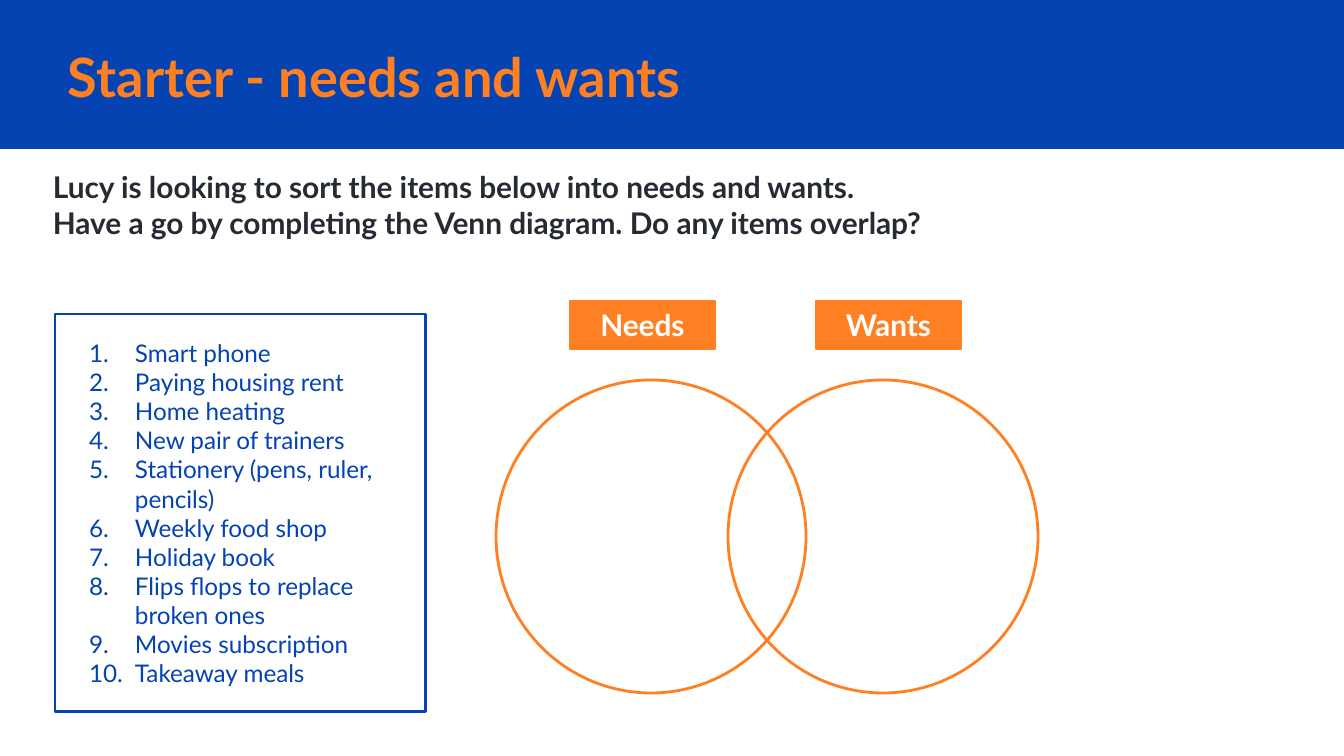
from lxml.etree import SubElement
from pptx import Presentation
from pptx.dml.color import RGBColor
from pptx.enum.shapes import MSO_SHAPE
from pptx.enum.text import MSO_ANCHOR, PP_ALIGN
from pptx.oxml.ns import qn
from pptx.util import Emu, Pt

FONT = "Lato"
BLUE, ORANGE, WHITE, DARK = "0543B3", "FF8022", "FFFFFF", "262A33"
PAD = 13


def px(n):
    return Emu(round(n * 914400 / 134.4))


def tint(color, code):
    color.rgb = RGBColor.from_string(code)


def shape(slide, kind, box, fill=None, line=None, width=1.5):
    item = slide.shapes.add_shape(kind, *map(px, box))
    item.shadow.inherit = False
    if fill:
        item.fill.solid()
        tint(item.fill.fore_color, fill)
    else:
        item.fill.background()
    if line:
        tint(item.line.color, line)
        item.line.width = Pt(width)
    else:
        item.line.fill.background()
    return item


def write(item, lines, size, code, bold=True, pad=PAD,
          align=PP_ALIGN.LEFT, anchor=MSO_ANCHOR.MIDDLE, style=None):
    frame = item.text_frame
    frame.word_wrap = True
    frame.vertical_anchor = anchor
    frame.margin_left = frame.margin_right = px(pad)
    frame.margin_top = frame.margin_bottom = px(pad)
    for i, line in enumerate(lines):
        para = frame.add_paragraph() if i else frame.paragraphs[0]
        para.alignment = align
        if style:
            style(para)
        run = para.add_run()
        run.text = line
        run.font.name = FONT
        run.font.size = Pt(size)
        run.font.bold = bold
        tint(run.font.color, code)


def number(para):
    props = para._p.get_or_add_pPr()
    props.set("marL", str(px(67)))
    props.set("indent", str(-px(46)))
    color = SubElement(props, qn("a:buClr"))
    SubElement(color, qn("a:srgbClr"), val=BLUE)
    SubElement(props, qn("a:buFont"), typeface=FONT)
    SubElement(props, qn("a:buAutoNum"), type="arabicPeriod")


# Title band
def header(slide, box, title):
    x, y, w, h = box
    shape(slide, MSO_SHAPE.RECTANGLE, box, BLUE)
    text = slide.shapes.add_textbox(*map(px, (x + 55, y + 38, 839, 75)))
    write(text, [title], 29, ORANGE)


# Task text
def task(slide, box, lines):
    text = slide.shapes.add_textbox(*map(px, box))
    write(text, lines, 16, DARK, pad=0, anchor=MSO_ANCHOR.TOP)


# Numbered list in a frame
def items(slide, box, lines):
    card = shape(slide, MSO_SHAPE.RECTANGLE, box, WHITE, BLUE)
    write(card, lines, 13, BLUE, bold=False, style=number)


# Two overlapping circles, each with a label above
def venn(slide, box, names):
    x, y, w, h = box
    size, drop = 310, 79
    for i, name in enumerate(names):
        left = x + i * (w - size)
        shape(slide, MSO_SHAPE.OVAL, (left, y + drop, size, h - drop),
              line=ORANGE)
    for i, name in enumerate(names):
        tag = shape(slide, MSO_SHAPE.RECTANGLE,
                    (x + 74 + i * 246, y, 145, 48), ORANGE, ORANGE, 0.75)
        write(tag, [name], 16, WHITE, align=PP_ALIGN.CENTER)


def main():
    deck = Presentation()
    deck.slide_width, deck.slide_height = px(1344), px(756)
    slide = deck.slides.add_slide(deck.slide_layouts[6])
    header(slide, (0, 0, 1344, 149), "Starter - needs and wants")
    venn(slide, (496, 301, 542, 392), ["Needs", "Wants"])
    task(slide, (53, 169, 1003, 101), [
        "Lucy is looking to sort the items below into needs and wants.",
        "Have a go by completing the Venn diagram. Do any items overlap?",
    ])
    items(slide, (55, 314, 371, 398), [
        "Smart phone",
        "Paying housing rent",
        "Home heating",
        "New pair of trainers",
        "Stationery (pens, ruler, pencils)",
        "Weekly food shop",
        "Holiday book",
        "Flips flops to replace broken ones",
        "Movies subscription",
        "Takeaway meals",
    ])
    deck.save("out.pptx")


if __name__ == "__main__":
    main()
